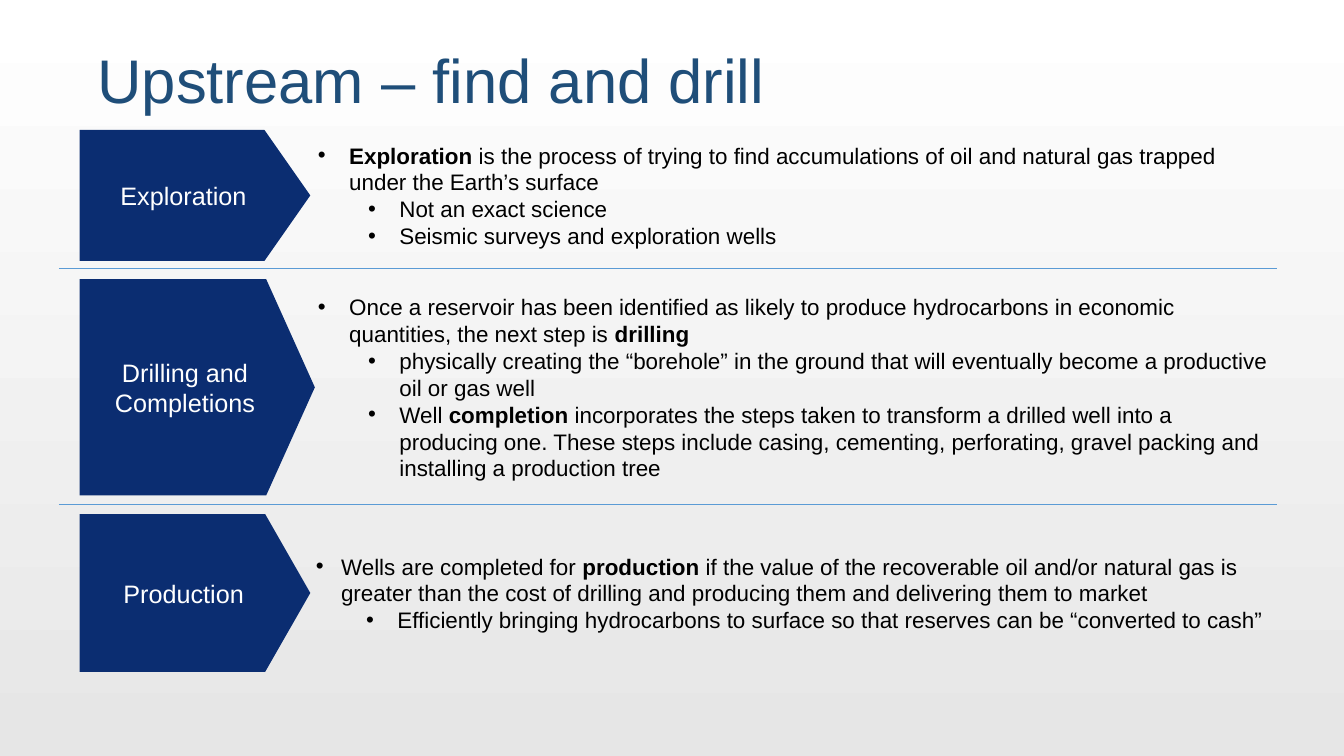
import pptx
import pptx.util
import pptx.dml.color
import pptx.enum.shapes
import pptx.enum.text
import pptx.oxml
from pptx.oxml import ns

Cm = pptx.util.Cm
Anchor = pptx.enum.text.MSO_ANCHOR
Align = pptx.enum.text.PP_ALIGN

TITLE = "Upstream – find and drill"
STAGES = [
    {"label": "Exploration", "top": 6.55, "height": 6.6, "label_width": 11.63,
     "point": 0.35, "text_left": 15.77, "indent": 1.58, "points": [
         (0, "**Exploration** is the process of trying to find accumulations of oil "
             "and natural gas trapped under the Earth’s surface"),
         (1, "Not an exact science"),
         (1, "Seismic surveys and exploration wells")]},
    {"label": "Drilling and Completions", "top": 14.07, "height": 10.9, "label_width": 11.86,
     "point": 0.225, "text_left": 15.77, "indent": 1.58, "points": [
         (0, "Once a reservoir has been identified as likely to produce hydrocarbons "
             "in economic quantities, the next step is **drilling**"),
         (1, "physically creating the “borehole” in the ground that will eventually "
             "become a productive oil or gas well"),
         (1, "Well **completion** incorporates the steps taken to transform a drilled "
             "well into a producing one. These steps include casing, cementing, "
             "perforating, gravel packing and installing a production tree")]},
    {"label": "Production", "top": 25.91, "height": 7.95, "label_width": 11.63,
     "point": 0.286, "text_left": 15.67, "indent": 1.27, "points": [
         (0, "Wells are completed for **production** if the value of the recoverable oil "
             "and/or natural gas is greater than the cost of drilling and producing "
             "them and delivering them to market"),
         (1, "Efficiently bringing hydrocarbons to surface so that reserves can be "
             "“converted to cash”")]},
]
DIVIDERS = [13.54, 25.4]
LABEL_LEFT, DIVIDER_LEFT, RIGHT = 4.01, 2.97, 64.35
SUB_MARGIN, SUB_INDENT = 4.11, 1.58


def color(value):
    return pptx.dml.color.RGBColor.from_string(value)


def style(run, size, value, bold=False):
    run.font.name = "Arial"
    run.font.size = pptx.util.Pt(size)
    run.font.color.rgb = color(value)
    run.font.bold = bold


def add_bullet(paragraph, margin, indent):
    properties = paragraph._p.get_or_add_pPr()
    properties.set("marL", str(Cm(margin)))
    properties.set("indent", str(-Cm(indent)))
    for tag, key, value in (("buFont", "typeface", "Arial"), ("buChar", "char", "•")):
        properties.append(pptx.oxml.parse_xml(
            f'<a:{tag} {ns.nsdecls("a")} {key}="{value}"/>'))


def add_label(slide, stage):
    arrow = slide.shapes.add_shape(
        pptx.enum.shapes.MSO_SHAPE.PENTAGON, Cm(LABEL_LEFT), Cm(stage["top"]),
        Cm(stage["label_width"]), Cm(stage["height"]))
    arrow.adjustments[0] = stage["point"]
    arrow.shadow.inherit = False
    arrow.fill.solid()
    arrow.fill.fore_color.rgb = color("0B2D71")
    arrow.line.fill.background()
    frame = arrow.text_frame
    frame.word_wrap = True
    frame.vertical_anchor = Anchor.MIDDLE
    frame.text = stage["label"]
    frame.paragraphs[0].alignment = Align.CENTER
    style(frame.paragraphs[0].runs[0], 36, "FFFFFF")


def add_points(slide, stage):
    left = stage["text_left"]
    frame = slide.shapes.add_textbox(
        Cm(left), Cm(stage["top"]), Cm(RIGHT - left), Cm(stage["height"])).text_frame
    frame.word_wrap = True
    frame.vertical_anchor = Anchor.MIDDLE
    for index, (level, text) in enumerate(stage["points"]):
        paragraph = frame.add_paragraph() if index else frame.paragraphs[0]
        paragraph.level = level
        if level:
            add_bullet(paragraph, SUB_MARGIN, SUB_INDENT)
        else:
            add_bullet(paragraph, stage["indent"], stage["indent"])
        for part, words in enumerate(text.split("**")):
            if words:
                run = paragraph.add_run()
                run.text = words
                style(run, 32, "000000", part % 2 == 1)


def add_divider(slide, top):
    divider = slide.shapes.add_connector(
        pptx.enum.shapes.MSO_CONNECTOR.STRAIGHT,
        Cm(DIVIDER_LEFT), Cm(top), Cm(RIGHT), Cm(top))
    divider.line.color.rgb = color("5B9BD5")
    divider.line.width = pptx.util.Pt(0.5)
    divider._element.spPr.append(pptx.oxml.parse_xml(f'<a:effectLst {ns.nsdecls("a")}/>'))


def add_title(slide):
    title = slide.shapes.title
    title.left, title.top, title.width, title.height = Cm(4.65), Cm(2.39), Cm(58.42), Cm(7.37)
    frame = title.text_frame
    frame.text = TITLE
    frame.word_wrap = True
    frame.auto_size = pptx.enum.text.MSO_AUTO_SIZE.NONE
    frame.vertical_anchor = Anchor.TOP
    frame.paragraphs[0].alignment = Align.LEFT
    frame.paragraphs[0].line_spacing = 0.9
    style(frame.paragraphs[0].runs[0], 88, "1F4E79")


def main():
    deck = pptx.Presentation()
    deck.slide_width, deck.slide_height = Cm(67.74), Cm(38.1)
    slide = deck.slides.add_slide(deck.slide_layouts[5])
    background = slide.background.fill
    background.gradient()
    background.gradient_angle = 270
    for stop, value in zip(background.gradient_stops, ("FFFFFF", "E6E6E6")):
        stop.color.rgb = color(value)
    add_title(slide)
    for stage in STAGES:
        add_label(slide, stage)
        add_points(slide, stage)
    for top in DIVIDERS:
        add_divider(slide, top)
    deck.save("out.pptx")


if __name__ == "__main__":
    main()
